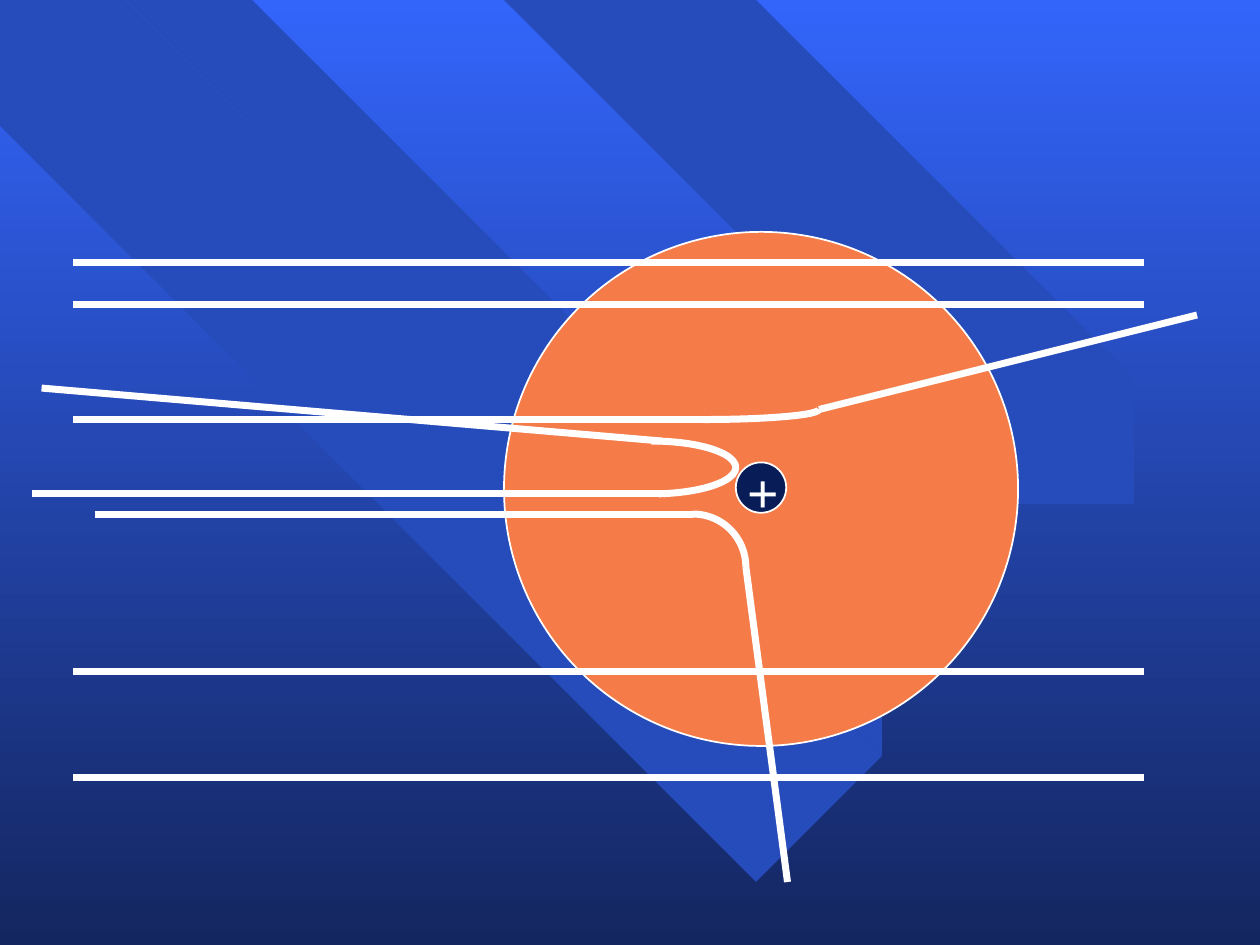
from dataclasses import dataclass
from typing import NamedTuple

from lxml import etree
from pptx import Presentation
from pptx.dml.color import RGBColor
from pptx.enum.shapes import MSO_CONNECTOR, MSO_SHAPE
from pptx.oxml.ns import qn
from pptx.util import Inches, Pt

STRAIGHT = MSO_CONNECTOR.STRAIGHT
ELLIPSE = MSO_SHAPE.OVAL
ARC = MSO_SHAPE.ARC


@dataclass(frozen=True)
class Theme:
    sky: RGBColor = RGBColor(0x33, 0x65, 0xFB)
    night: RGBColor = RGBColor(0x14, 0x26, 0x60)
    band: RGBColor = RGBColor(0x26, 0x4C, 0xBC)
    atom: RGBColor = RGBColor(0xF5, 0x7B, 0x49)
    nucleus: RGBColor = RGBColor(0x08, 0x1D, 0x58)
    white: RGBColor = RGBColor(0xFF, 0xFF, 0xFF)
    font: str = "Times New Roman"
    sign_size: float = 32
    outline: float = 1
    track: float = 4


class Circle(NamedTuple):
    cx: float
    cy: float
    radius: float
    color: RGBColor


class Track(NamedTuple):
    x1: float
    y1: float
    x2: float
    y2: float


class Bend(NamedTuple):
    """Part of an ellipse, in degrees clockwise from the right."""
    cx: float
    cy: float
    rx: float
    ry: float
    start: float
    end: float


THEME = Theme()

BANDS = [
    [(0, 0), (0.79, 0), (6.7, 5.93), (5.89, 6.75), (0, 0.84)],
    [(1.49, 0), (2.14, 0), (7.38, 5.27), (7.06, 5.59)],
    [(3.8, 0), (4.89, 0), (8.76, 3.89), (8.21, 4.44)],
    [(5.3, 0), (5.91, 0), (9.27, 3.38), (8.97, 3.68)],
]

CIRCLES = [
    Circle(6.04, 3.88, 2.04, THEME.atom),
    Circle(6.04, 3.87, 0.2, THEME.nucleus),
]

# Particles that pass straight through
PASSING = [Track(0.58, y, 9.08, y) for y in (2.08, 2.42, 5.33, 6.17)]

# Particles turned aside: way in and way out, with a bend between
DEFLECTED = [
    Track(0.75, 4.08, 5.5, 4.08), Track(5.92, 4.5, 6.25, 7),
    Track(0.58, 3.33, 5.58, 3.33), Track(6.5, 3.25, 9.5, 2.5),
    Track(0.25, 3.92, 5.25, 3.92), Track(0.33, 3.08, 5.25, 3.5),
]
BENDS = [
    Bend(5.5, 4.5, 0.42, 0.42, 270, 0),
    Bend(5.58, 3.25, 0.92, 0.08, 0, 90),
    Bend(5.17, 3.71, 0.67, 0.21, 270, 74),
]


def add_band(shapes, points: list[tuple[float, float]]) -> None:
    builder = shapes.build_freeform(*points[0], scale=Inches(1))
    builder.add_line_segments(points[1:], close=True)
    sp = builder.convert_to_shape()
    sp.shadow.inherit = False
    sp.fill.solid()
    sp.fill.fore_color.rgb = THEME.band
    sp.line.fill.background()


def set_line(sp, width: float) -> None:
    sp.line.color.rgb = THEME.white
    sp.line.width = Pt(width)


def add_oval_part(shapes, preset, cx: float, cy: float, rx: float, ry: float):
    sp = shapes.add_shape(preset, Inches(cx - rx), Inches(cy - ry),
                          Inches(2 * rx), Inches(2 * ry))
    sp.shadow.inherit = False
    return sp


def add_circle(shapes, c: Circle) -> None:
    sp = add_oval_part(shapes, ELLIPSE, c.cx, c.cy, c.radius, c.radius)
    sp.fill.solid()
    sp.fill.fore_color.rgb = c.color
    set_line(sp, THEME.outline)


def add_sign(shapes, text: str) -> None:
    sp = shapes.add_textbox(Inches(5.83), Inches(3.58), Inches(0.5), Inches(0.63))
    tf = sp.text_frame
    tf.word_wrap = True
    tf.text = text
    p = tf.paragraphs[0]
    p.space_before = Pt(3)
    font = p.runs[0].font
    font.name, font.size, font.bold = THEME.font, Pt(THEME.sign_size), True
    font.color.rgb = THEME.white


def add_track(shapes, t: Track) -> None:
    line = shapes.add_connector(STRAIGHT, Inches(t.x1), Inches(t.y1),
                                Inches(t.x2), Inches(t.y2))
    set_line(line, THEME.track)
    etree.SubElement(line._element.spPr, qn("a:effectLst"))


def add_bend(shapes, b: Bend) -> None:
    sp = add_oval_part(shapes, ARC, b.cx, b.cy, b.rx, b.ry)
    # Angles are stored in 1/60000 degree, adjustments in 1/100000
    sp.adjustments[0] = b.start * 0.6
    sp.adjustments[1] = b.end * 0.6
    sp.fill.background()
    set_line(sp, THEME.track)


def main() -> None:
    prs = Presentation()
    prs.slide_width, prs.slide_height = Inches(10), Inches(7.5)
    s = prs.slides.add_slide(prs.slide_layouts[6])

    # Background: gradient from top to bottom, with slanting bands
    fill = s.background.fill
    fill.gradient()
    fill.gradient_angle = 270
    for stop, color in zip(fill.gradient_stops, (THEME.sky, THEME.night)):
        stop.color.rgb = color
    bands = s.shapes.add_group_shape().shapes
    for points in BANDS:
        add_band(bands, points)

    # Atom with its charged nucleus
    atom = s.shapes.add_group_shape().shapes
    for circle in CIRCLES:
        add_circle(atom, circle)
    add_sign(atom, "+")

    # Particle paths
    for track in PASSING + DEFLECTED:
        add_track(s.shapes, track)
    for bend in BENDS:
        add_bend(s.shapes, bend)

    prs.save("out.pptx")


if __name__ == "__main__":
    main()
